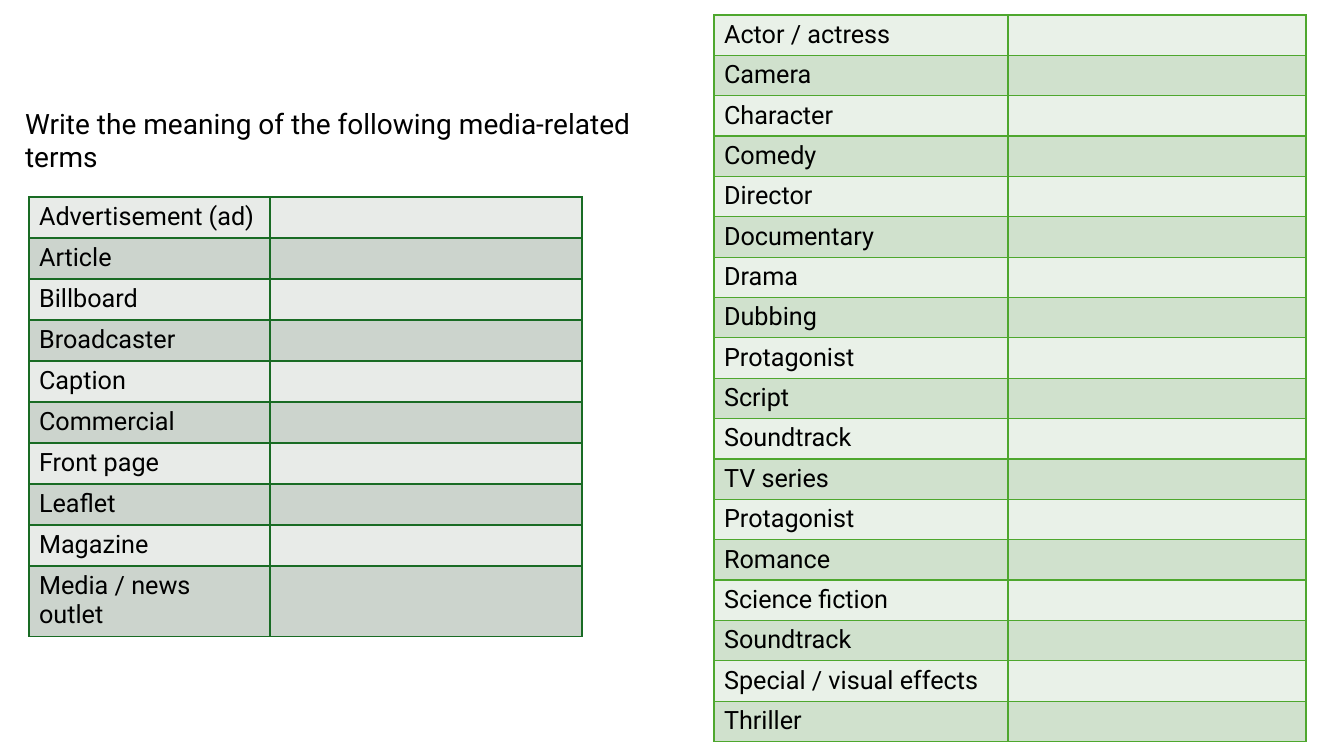
from lxml import etree
from pptx import Presentation
from pptx.dml.color import RGBColor
from pptx.enum.text import MSO_ANCHOR, MSO_AUTO_SIZE, PP_ALIGN
from pptx.oxml.ns import qn
from pptx.util import Emu, Pt

TOP, LEFT = MSO_ANCHOR.TOP, PP_ALIGN.LEFT
GROW = MSO_AUTO_SIZE.SHAPE_TO_FIT_TEXT

# Content
HEADING = "Write the meaning of the following media-related terms"
PRESS_TERMS = [
    "Advertisement (ad)", "Article", "Billboard", "Broadcaster", "Caption",
    "Commercial", "Front page", "Leaflet", "Magazine", "Media / news outlet",
]
SCREEN_TERMS = [
    "Actor / actress", "Camera", "Character", "Comedy", "Director",
    "Documentary", "Drama", "Dubbing", "Protagonist", "Script", "Soundtrack",
    "TV series", "Protagonist", "Romance", "Science fiction", "Soundtrack",
    "Special / visual effects", "Thriller",
]
COLORS = {
    "text": "000000",
    "press border": "196B24", "press bands": ("E8EBE8", "CCD4CD"),
    "screen border": "4EA72E", "screen bands": ("E9F1E8", "D0E1CD"),
}

# Lengths in px
HEADING_BOX = (15, 101, 685, 44)
TABLES = [
    {"name": "press", "terms": PRESS_TERMS, "left": 29, "top": 197,
     "columns": (241, 312), "row": 41},
    {"name": "screen", "terms": SCREEN_TERMS, "left": 714, "top": 15,
     "columns": (294, 298), "row": 32},
]
PX_PER_INCH = 100.8


def px(length):
    return Emu(round(length * 914400 / PX_PER_INCH))


def set_font(paragraph, size):
    formats = {"name": "Roboto", "size": Pt(size), "bold": False}
    for attribute, value in formats.items():
        setattr(paragraph.font, attribute, value)
    paragraph.font.color.rgb = RGBColor.from_string(COLORS["text"])


def set_borders(cell, color):
    properties = cell._tc.get_or_add_tcPr()
    for position, side in enumerate(("lnL", "lnR", "lnT", "lnB")):
        line = etree.Element(qn(f"a:{side}"), w=str(Pt(1)))
        fill = etree.SubElement(line, qn("a:solidFill"))
        etree.SubElement(fill, qn("a:srgbClr"), val=color)
        properties.insert(position, line)


def add_term_table(slide, name, terms, left, top, columns, row):
    frame = slide.shapes.add_table(
        len(terms), len(columns), px(left), px(top),
        px(sum(columns)), px(row * len(terms)))
    table = frame.table
    for column, width in zip(table.columns, columns):
        column.width = px(width)
    bands = COLORS[f"{name} bands"]
    for index, term in enumerate(terms):
        table.rows[index].height = px(row)
        table.cell(index, 0).text = term
        for cell in table.rows[index].cells:
            cell.fill.solid()
            cell.fill.fore_color.rgb = RGBColor.from_string(bands[index % 2])
            set_borders(cell, COLORS[f"{name} border"])
            set_font(cell.text_frame.paragraphs[0], 18)


def main():
    presentation = Presentation()
    presentation.slide_width, presentation.slide_height = px(1344), px(756)
    slide = presentation.slides.add_slide(presentation.slide_layouts[5])

    # Heading
    heading = slide.shapes.title
    for attribute, length in zip(("left", "top", "width", "height"), HEADING_BOX):
        setattr(heading, attribute, px(length))
    text_frame = heading.text_frame
    text_frame.text = HEADING
    formats = {"word_wrap": True, "auto_size": GROW, "vertical_anchor": TOP}
    for attribute, value in formats.items():
        setattr(text_frame, attribute, value)
    text_frame.paragraphs[0].alignment = LEFT
    set_font(text_frame.paragraphs[0], 20)

    # Term tables
    for table in TABLES:
        add_term_table(slide, **table)

    presentation.save("out.pptx")


if __name__ == "__main__":
    main()
